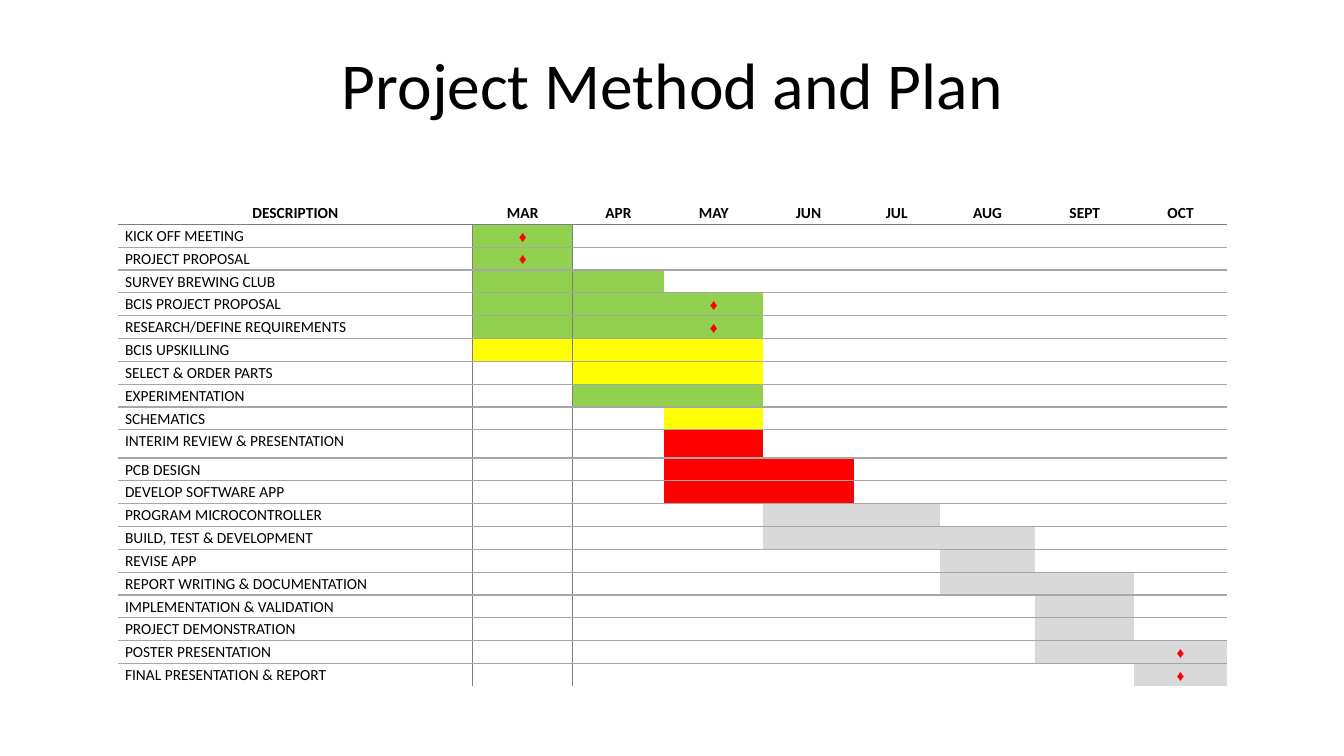
from dataclasses import dataclass

from lxml.etree import SubElement
from pptx import Presentation
from pptx.dml.color import RGBColor
from pptx.enum.text import MSO_ANCHOR, MSO_AUTO_SIZE, PP_ALIGN
from pptx.oxml.ns import qn
from pptx.slide import Slide
from pptx.table import Table, _Cell
from pptx.util import Inches, Pt

WIDTH, HEIGHT = Inches(13.33), Inches(7.5)
LEFT, TOP = Inches(1.17), Inches(2)
COLS = [3.52, 0.99, 0.91, 0.98, 0.9, 0.85, 0.95, 0.98, 0.92]
ROW = Inches(4.76 / 21)
TALL = Inches(0.28)
MONTHS = ["MAR", "APR", "MAY", "JUN", "JUL", "AUG", "SEPT", "OCT"]
BLACK, MARK, DARK, LIGHT = "000000", "FF0000", "7F7F7F", "A6A6A6"
DONE, BUSY, LATE, NEXT = "92D050", "FFFF00", "FF0000", "D9D9D9"
PLAIN = "{2D5ABB26-0587-4C30-8999-92F81FD0307C}"


@dataclass
class Task:
    name: str
    first: str
    last: str
    color: str
    stone: str = ""
    high: int = ROW

    def fill(self, month: str) -> str:
        """Give the bar colour in a month, or nothing outside the bar."""
        start, end = MONTHS.index(self.first), MONTHS.index(self.last)
        return self.color if start <= MONTHS.index(month) <= end else ""


TASKS = [
    Task("KICK OFF MEETING", "MAR", "MAR", DONE, "MAR"),
    Task("PROJECT PROPOSAL", "MAR", "MAR", DONE, "MAR"),
    Task("SURVEY BREWING CLUB", "MAR", "APR", DONE),
    Task("BCIS PROJECT PROPOSAL", "MAR", "MAY", DONE, "MAY"),
    Task("RESEARCH/DEFINE REQUIREMENTS", "MAR", "MAY", DONE, "MAY"),
    Task("BCIS UPSKILLING", "MAR", "MAY", BUSY),
    Task("SELECT & ORDER PARTS", "APR", "MAY", BUSY),
    Task("EXPERIMENTATION", "APR", "MAY", DONE),
    Task("SCHEMATICS", "MAY", "MAY", BUSY),
    Task("INTERIM REVIEW & PRESENTATION", "MAY", "MAY", LATE, "MAY", TALL),
    Task("PCB DESIGN", "MAY", "JUN", LATE),
    Task("DEVELOP SOFTWARE APP", "MAY", "JUN", LATE),
    Task("PROGRAM MICROCONTROLLER", "JUN", "JUL", NEXT),
    Task("BUILD, TEST & DEVELOPMENT", "JUN", "AUG", NEXT),
    Task("REVISE APP", "AUG", "AUG", NEXT),
    Task("REPORT WRITING & DOCUMENTATION", "AUG", "SEPT", NEXT),
    Task("IMPLEMENTATION & VALIDATION", "SEPT", "SEPT", NEXT),
    Task("PROJECT DEMONSTRATION", "SEPT", "SEPT", NEXT),
    Task("POSTER PRESENTATION", "SEPT", "OCT", NEXT, "OCT"),
    Task("FINAL PRESENTATION & REPORT", "OCT", "OCT", NEXT, "OCT"),
]


def rgb(code: str) -> RGBColor:
    return RGBColor.from_string(code)


def add_title(slide: Slide, text: str) -> None:
    title = slide.shapes.title
    title.left, title.top = Inches(0.92), Inches(0.61)
    title.width, title.height = Inches(11.5), Inches(0.54)
    frame = title.text_frame
    frame.text = text
    frame.auto_size = MSO_AUTO_SIZE.NONE
    frame.vertical_anchor = MSO_ANCHOR.MIDDLE
    para = frame.paragraphs[0]
    para.alignment, para.line_spacing = PP_ALIGN.CENTER, 0.9
    para.font.name, para.font.size = "Calibri", Pt(46.8)
    para.font.color.rgb = rgb(BLACK)


def write(cell: _Cell, text: str, align: PP_ALIGN, bold: bool = False,
          face: str = "Calibri", color: str = BLACK) -> None:
    cell.margin_left = cell.margin_right = Inches(0.07)
    cell.margin_top, cell.margin_bottom = Inches(0.01), 0
    cell.text = text
    para = cell.text_frame.paragraphs[0]
    para.alignment = align
    para.line_spacing, para.space_after = 1.07, Pt(8)
    font = para.font
    font.name, font.size, font.bold = face, Pt(11), bold
    font.color.rgb = rgb(color)


def paint(cell: _Cell, color: str) -> None:
    if color:
        cell.fill.solid()
        cell.fill.fore_color.rgb = rgb(color)
    else:
        cell.fill.background()


def rule(cell: _Cell, row: int, col: int) -> None:
    """Draw the cell's borders; call it before the cell is filled."""
    side = {}
    if row and col == 1:
        side["L"] = DARK
    if row and col == 0:
        side["R"] = DARK
    if row:
        side["T"] = DARK if row == 1 else LIGHT
    if row < len(TASKS):
        side["B"] = LIGHT if row else DARK
    props = cell._tc.get_or_add_tcPr()
    for key, color in side.items():
        line = SubElement(props, qn(f"a:ln{key}"), w=str(Pt(1)))
        fill = SubElement(line, qn("a:solidFill"))
        SubElement(fill, qn("a:srgbClr"), val=color)


def add_grid(slide: Slide) -> Table:
    high = ROW + sum(task.high for task in TASKS)
    table = slide.shapes.add_table(
        len(TASKS) + 1, len(COLS), LEFT, TOP, Inches(sum(COLS)), high).table
    table.first_row = table.horz_banding = False
    table._tbl.tblPr.find(qn("a:tableStyleId")).text = PLAIN
    for col, width in zip(table.columns, COLS):
        col.width = Inches(width)
    for line, size in zip(table.rows, [ROW] + [task.high for task in TASKS]):
        line.height = size
    for row in range(len(TASKS) + 1):
        for col in range(len(COLS)):
            rule(table.cell(row, col), row, col)
    return table


def fill_grid(table: Table) -> None:
    for col, text in enumerate(["DESCRIPTION"] + MONTHS):
        cell = table.cell(0, col)
        write(cell, text, PP_ALIGN.CENTER, bold=True)
        paint(cell, "")
    for row, task in enumerate(TASKS, 1):
        name = table.cell(row, 0)
        write(name, task.name, PP_ALIGN.LEFT)
        paint(name, "")
        for col, month in enumerate(MONTHS, 1):
            cell = table.cell(row, col)
            cell.vertical_anchor = MSO_ANCHOR.MIDDLE
            write(cell, "♦" if month == task.stone else "", PP_ALIGN.CENTER,
                  face="Times New Roman", color=MARK)
            paint(cell, task.fill(month))


def main() -> None:
    deck = Presentation()
    deck.slide_width, deck.slide_height = WIDTH, HEIGHT
    slide = deck.slides.add_slide(deck.slide_layouts[5])
    add_title(slide, "Project Method and Plan")
    fill_grid(add_grid(slide))
    deck.save("out.pptx")


if __name__ == "__main__":
    main()
